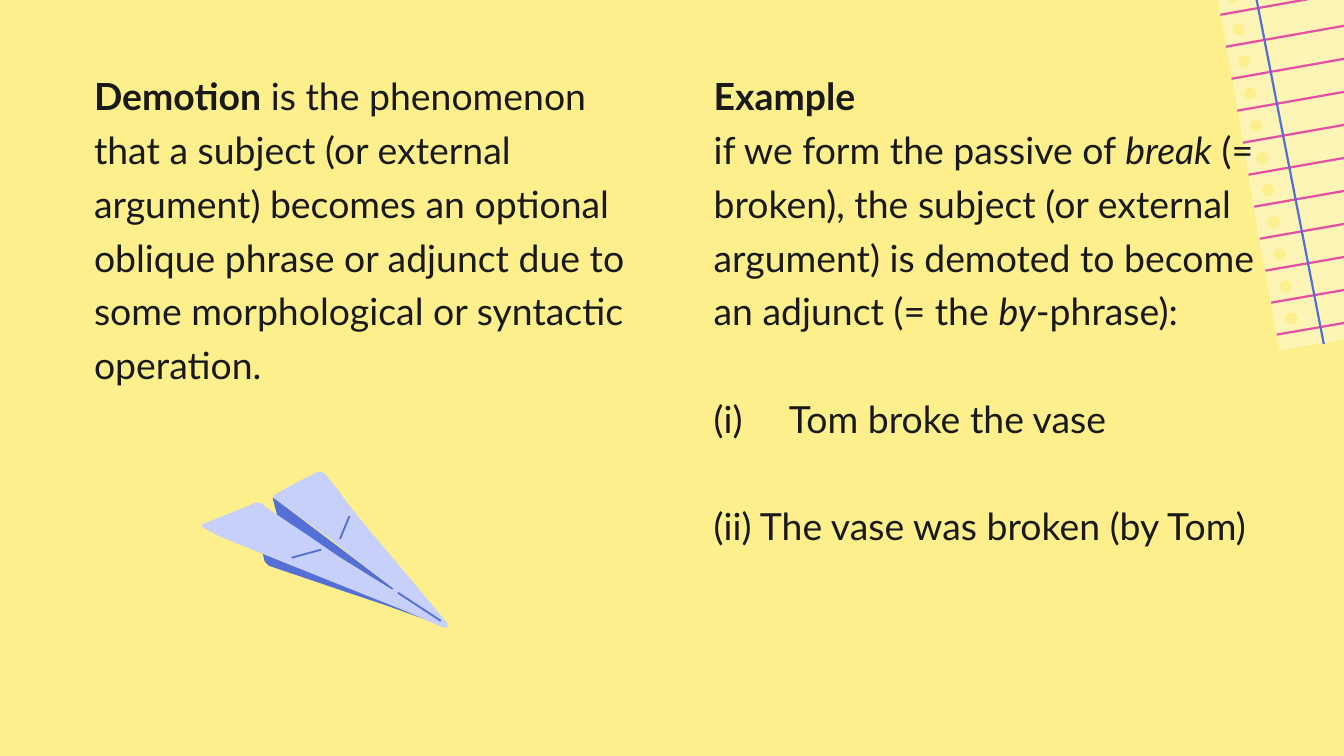
import lxml.etree
import pptx
import pptx.dml.color
import pptx.enum.shapes
import pptx.oxml.ns
import pptx.util

Inches = pptx.util.Inches
Pt = pptx.util.Pt

YELLOW, PAPER, PINK = "FCEF8C", "FDF5B6", "E64FA5"
BLUE, LILAC, INK = "5470D6", "C7CFFB", "191918"

PAGE = [(9.02, -0.25), (11.06, -0.65), (11.35, 0.69), (11.54, 1.64),
        (11.66, 2.21), (11.26, 2.3), (9.52, 2.61), (9.37, 1.79), (9.21, 0.82)]
INNER_FOLD = [(2.03, 3.7), (2.93, 4.38), (2.92, 4.39), (2.07, 3.86),
              (2.03, 3.71)]
OUTER_FOLD = [(1.95, 4.1), (1.97, 4.09), (2.38, 4.23), (2.7, 4.37),
              (2.99, 4.5), (3.2, 4.6), (3.24, 4.62), (3.22, 4.63),
              (2.86, 4.5), (2.56, 4.4), (2, 4.21), (1.97, 4.18)]
WINGS = [(3.33, 4.64), (3.08, 4.34), (2.87, 4.09), (2.71, 3.9), (2.59, 3.75),
         (2.51, 3.64), (2.42, 3.53), (2.39, 3.51), (2.37, 3.51), (2.33, 3.53),
         (2.19, 3.6), (2.05, 3.68), (2.03, 3.7), (2.47, 4.02), (2.71, 4.21),
         (2.93, 4.38), (2.92, 4.39), (2.56, 4.17), (2.3, 3.99), (2, 3.79),
         (1.95, 3.75), (1.93, 3.74), (1.9, 3.74), (1.86, 3.76), (1.56, 3.88),
         (1.51, 3.9), (1.5, 3.92), (1.63, 3.99), (2, 4.14), (2.7, 4.42),
         (3, 4.54), (3.3, 4.67), (3.33, 4.67)]
CREASES = [((2.53, 4.01), (2.6, 3.84)), ((2.17, 4.15), (2.39, 4.09)),
           ((2.96, 4.41), (3.28, 4.62))]
RULES = 11
FIRST_RULE = (9.08, 0.11, 11.16, -0.26)
LAST_RULE = (9.5, 2.49, 11.64, 2.12)
FIRST_HOLE = (9.17, -0.02)
LAST_HOLE = (9.61, 2.37)


def rgb(value):
    return pptx.dml.color.RGBColor.from_string(value)


def between(first, last, step):
    return [a + (b - a) * step / (RULES - 1) for a, b in zip(first, last)]


def paint(shape, color):
    shape.shadow.inherit = False
    shape.fill.solid()
    shape.fill.fore_color.rgb = rgb(color)
    shape.line.fill.background()


def add_outline(slide, points, color):
    corners = [(Inches(x), Inches(y)) for x, y in points]
    builder = slide.shapes.build_freeform(*corners[0])
    builder.add_line_segments(corners[1:], close=True)
    paint(builder.convert_to_shape(), color)


def add_dot(slide, x, y, size, color):
    dot = slide.shapes.add_shape(
        pptx.enum.shapes.MSO_SHAPE.OVAL, Inches(x - size / 2),
        Inches(y - size / 2), Inches(size), Inches(size))
    paint(dot, color)


def add_stroke(slide, ends, color, width):
    stroke = slide.shapes.add_connector(
        pptx.enum.shapes.MSO_CONNECTOR.STRAIGHT,
        *[Inches(value) for value in ends])
    stroke.line.color.rgb = rgb(color)
    stroke.line.width = Pt(width)
    lxml.etree.SubElement(stroke._element.spPr, pptx.oxml.ns.qn("a:effectLst"))


def add_column(slide, left):
    column = slide.shapes.add_textbox(
        Inches(left), Inches(0.48), Inches(4.27), Inches(4.52)).text_frame
    column.word_wrap = True
    column.margin_left = column.margin_right = 0
    column.margin_top = column.margin_bottom = 0
    return column


def write_paragraph(paragraph, runs, gap=0, margin=0.14, indent=0):
    paragraph.line_spacing = 1.2
    paragraph.space_before = Pt(gap)
    properties = paragraph._p.get_or_add_pPr()
    properties.set("marL", str(Inches(margin)))
    properties.set("indent", str(Inches(indent)))
    for text, style in runs:
        run = paragraph.add_run()
        run.text = text
        run.font.name = "Lato"
        run.font.size = Pt(20)
        run.font.color.rgb = rgb(INK)
        run.font.bold = style == "bold"
        run.font.italic = style == "italic"


def number_paragraph(paragraph):
    properties = paragraph._p.get_or_add_pPr()
    qn = pptx.oxml.ns.qn
    color = lxml.etree.SubElement(properties, qn("a:buClr"))
    lxml.etree.SubElement(color, qn("a:srgbClr"), val=INK)
    lxml.etree.SubElement(properties, qn("a:buFont"), typeface="Lato")
    lxml.etree.SubElement(properties, qn("a:buAutoNum"), type="romanLcParenBoth")


def draw_notebook_page(slide):
    add_outline(slide, PAGE, PAPER)
    for row in range(RULES):
        add_dot(slide, *between(FIRST_HOLE, LAST_HOLE, row), 0.09, YELLOW)
    for row in range(RULES):
        add_stroke(slide, between(FIRST_RULE, LAST_RULE, row), PINK, 1.2)
    add_stroke(slide, (9.29, -0.31, 9.85, 2.56), BLUE, 1.2)


def draw_paper_plane(slide):
    add_outline(slide, INNER_FOLD, BLUE)
    add_outline(slide, OUTER_FOLD, BLUE)
    add_outline(slide, WINGS, LILAC)
    for start, end in CREASES:
        add_stroke(slide, start + end, BLUE, 1)


def write_definition(slide):
    column = add_column(slide, 0.56)
    write_paragraph(column.paragraphs[0], [
        ("Demotion", "bold"),
        (" is the phenomenon that a subject (or external argument) becomes an "
         "optional oblique phrase or adjunct due to some morphological or "
         "syntactic operation.", "plain")])


def write_example(slide):
    column = add_column(slide, 5.17)
    write_paragraph(column.paragraphs[0], [("Example", "bold")])
    write_paragraph(column.add_paragraph(), [
        ("if we form the passive of ", "plain"),
        ("break", "italic"),
        (" (= broken), the subject (or external argument) is demoted to "
         "become an adjunct (= the ", "plain"),
        ("by", "italic"),
        ("-phrase):", "plain")])
    active = column.add_paragraph()
    write_paragraph(active, [("Tom broke the vase", "plain")],
                    gap=28.8, margin=0.7, indent=-0.56)
    number_paragraph(active)
    write_paragraph(column.add_paragraph(),
                    [("(ii) The vase was broken (by Tom)", "plain")], gap=28.8)


def main():
    deck = pptx.Presentation()
    deck.slide_width = Inches(10)
    deck.slide_height = deck.slide_width * 9 // 16
    slide = deck.slides.add_slide(deck.slide_layouts[6])
    slide.background.fill.solid()
    slide.background.fill.fore_color.rgb = rgb(YELLOW)
    draw_notebook_page(slide)
    write_definition(slide)
    write_example(slide)
    draw_paper_plane(slide)
    deck.save("out.pptx")


if __name__ == "__main__":
    main()
